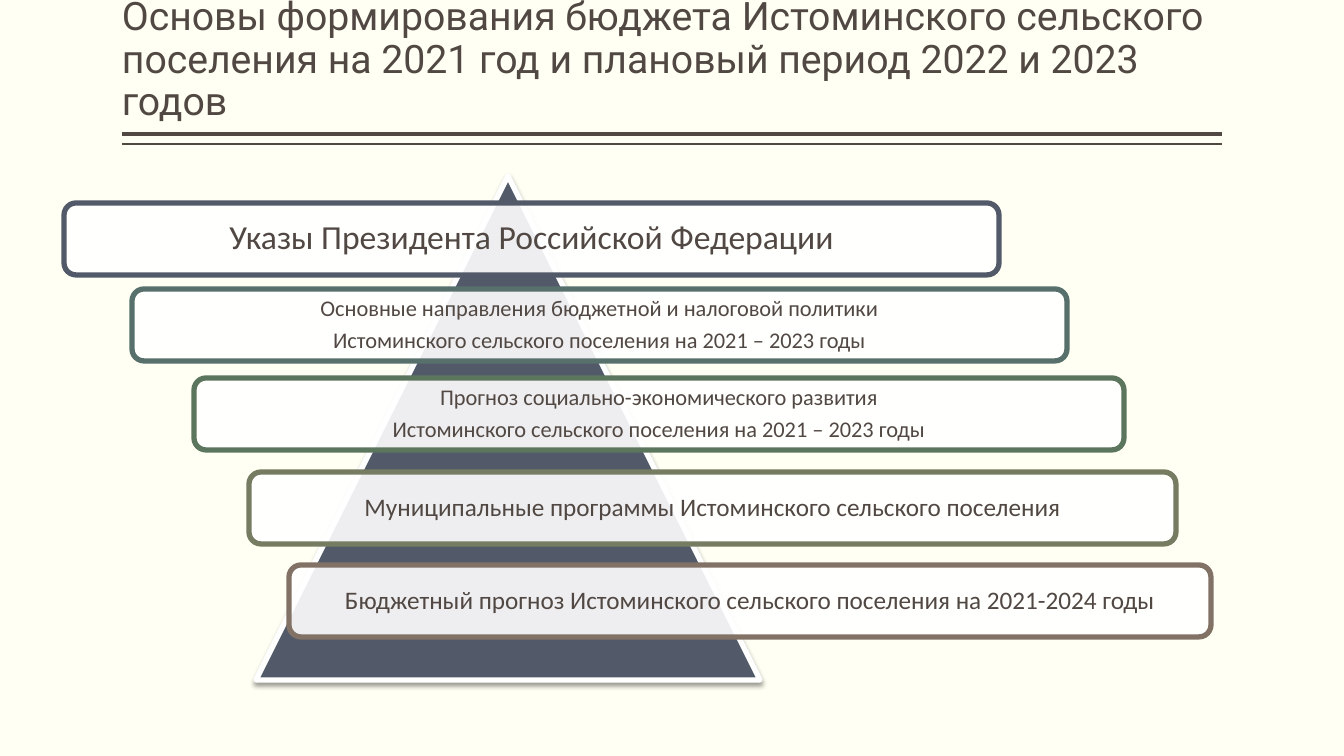
from lxml import etree
from pptx import Presentation
from pptx.dml.color import RGBColor
from pptx.enum.shapes import MSO_CONNECTOR, MSO_SHAPE
from pptx.enum.text import MSO_ANCHOR, PP_ALIGN
from pptx.oxml import parse_xml
from pptx.oxml.ns import qn
from pptx.util import Pt

STRAIGHT = MSO_CONNECTOR.STRAIGHT
TRIANGLE, ROUNDED = MSO_SHAPE.ISOSCELES_TRIANGLE, MSO_SHAPE.ROUNDED_RECTANGLE
LEFT, CENTER = PP_ALIGN.LEFT, PP_ALIGN.CENTER
MIDDLE, BOTTOM = MSO_ANCHOR.MIDDLE, MSO_ANCHOR.BOTTOM

COLORS = {
    "background": "FFFFF3", "ink": "514843", "white": "FFFFFF",
    "slate": "525A6A", "teal": "57706C", "green": "5C765D",
    "olive": "767C61", "brown": "827266",
}
TITLE = ("Основы формирования бюджета Истоминского сельского поселения "
         "на 2021 год и плановый период 2022 и 2023 годов")
TITLE_BOX = (122, 8, 1100, 121)
RULES = [(134, 3), (144, 1)]  # top in px, width in points
PYRAMID_BOX = (256, 176, 504, 504)

# left, top, width, margin in px; text size; border; lines
BANDS = [
    (64, 203, 935, 10, 24, "slate", ["Указы Президента Российской Федерации"]),
    (132, 289, 935, 7, 16, "teal",
     ["Основные направления бюджетной и налоговой политики",
      "Истоминского сельского поселения на 2021 – 2023 годы"]),
    (194, 378, 930, 7, 16, "green",
     ["Прогноз социально-экономического развития",
      "Истоминского сельского поселения на 2021 – 2023 годы"]),
    (249, 472, 927, 7, 18, "olive",
     ["Муниципальные программы Истоминского сельского поселения"]),
    (289, 565, 922, 7, 18, "brown",
     ["Бюджетный прогноз Истоминского сельского поселения на 2021-2024 годы"]),
]
BAND_HEIGHT = 72
BORDER = 3.78
SHADOW = """<a:effectLst xmlns:a="http://schemas.openxmlformats.org/drawingml/2006/main">
<a:outerShdw blurRad="44450" dist="25400" dir="5400000" rotWithShape="0">
<a:srgbClr val="000000"><a:alpha val="38000"/></a:srgbClr></a:outerShdw></a:effectLst>"""


def px(*lengths):
    return [round(length * 914400 / 100.8) for length in lengths]


def color(name):
    return RGBColor.from_string(COLORS[name])


def set_line(line, name, width):
    line.color.rgb = color(name)
    line.width = Pt(width)


def write(frame, lines, font, size, align, anchor, margins, space_after=0):
    frame.word_wrap = True
    frame.vertical_anchor = anchor
    (frame.margin_left, frame.margin_top,
     frame.margin_right, frame.margin_bottom) = px(*margins)
    for index, line in enumerate(lines):
        paragraph = frame.add_paragraph() if index else frame.paragraphs[0]
        paragraph.alignment = align
        paragraph.line_spacing = 0.9
        paragraph.space_after = Pt(space_after)
        run = paragraph.add_run()
        run.text = line
        run.font.name = font
        run.font.size = Pt(size)
        run.font.color.rgb = color("ink")


def add_filled(slide, preset, box, fill, border):
    shape = slide.shapes.add_shape(preset, *px(*box))
    shape.shadow.inherit = False
    shape.fill.solid()
    shape.fill.fore_color.rgb = color(fill)
    set_line(shape.line, border, BORDER)
    return shape


def add_rule(slide, top, width):
    left, right = TITLE_BOX[0], TITLE_BOX[0] + TITLE_BOX[2]
    rule = slide.shapes.add_connector(STRAIGHT, *px(left, top, right, top))
    set_line(rule.line, "ink", width)
    etree.SubElement(rule._element.spPr, qn("a:effectLst"))


def add_pyramid(slide):
    pyramid = add_filled(slide, TRIANGLE, PYRAMID_BOX, "slate", "white")
    properties = pyramid._element.spPr
    properties.replace(properties.find(qn("a:effectLst")), parse_xml(SHADOW))


def add_band(slide, left, top, width, margin, size, border, lines):
    band = add_filled(slide, ROUNDED, (left, top, width, BAND_HEIGHT), "white", border)
    fill_color = band._element.spPr.find(qn("a:solidFill"))[0]
    etree.SubElement(fill_color, qn("a:alpha"), val="90000")
    write(band.text_frame, lines, "Calibri", size, CENTER, MIDDLE,
          [margin] * 4, space_after=0.35 * size)


def main():
    deck = Presentation()
    deck.slide_width, deck.slide_height = px(1344, 756)
    slide = deck.slides.add_slide(deck.slide_layouts[6])
    slide.background.fill.solid()
    slide.background.fill.fore_color.rgb = color("background")

    for top, width in RULES:
        add_rule(slide, top, width)
    title = slide.shapes.add_textbox(*px(*TITLE_BOX))
    write(title.text_frame, [TITLE], "Roboto", 28, LEFT, BOTTOM, (0, 5, 0, 5))
    add_pyramid(slide)
    for band in BANDS:
        add_band(slide, *band)
    deck.save("out.pptx")


if __name__ == "__main__":
    main()
